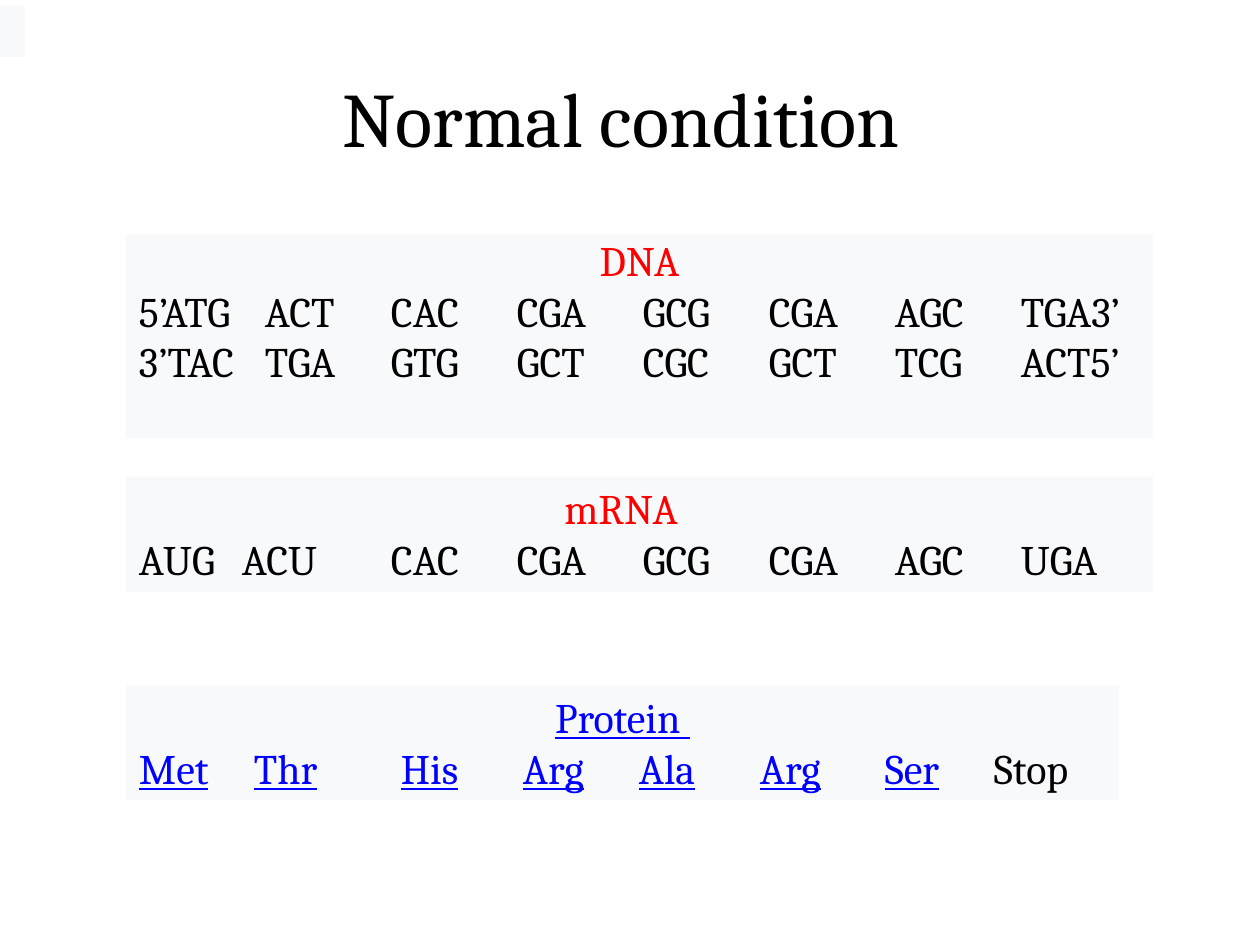
from lxml.etree import SubElement
from pptx import Presentation
from pptx.dml.color import RGBColor
from pptx.enum.shapes import MSO_SHAPE
from pptx.enum.text import MSO_ANCHOR, PP_ALIGN
from pptx.oxml.ns import qn
from pptx.util import Pt

PX = 914400 // 126
RED, BLUE, BLACK, PALE = "FF0000", "0000FF", "000000", "F8F9FA"


def tint(spot, code):
    spot.rgb = RGBColor.from_string(code)


def write(para, text, code, size=24, line=False):
    run = para.add_run()
    run.text = text
    style = {"name": "Cambria", "size": Pt(size), "underline": line}
    for key, value in style.items():
        setattr(run.font, key, value)
    tint(run.font.color, code)


deck = Presentation()
deck.slide_width, deck.slide_height = 1260 * PX, 945 * PX
slide = deck.slides.add_slide(deck.slide_layouts[6])

title = slide.shapes.add_textbox(63 * PX, 38 * PX, 1134 * PX, 157 * PX).text_frame
title.word_wrap = True
title.vertical_anchor = MSO_ANCHOR.MIDDLE
title.paragraphs[0].alignment = PP_ALIGN.CENTER
write(title.paragraphs[0], "Normal condition ", BLACK, 44)

inch = [126 * col for col in range(1, 8)]
panels = [
    ((126, 235, 1027, 203), 0, "DNA", RED, None, inch, [
        "5’ATG ACT CAC CGA GCG CGA AGC TGA3’",
        "3’TAC TGA GTG GCT CGC GCT TCG ACT5’"]),
    ((0, 6, 25, 51), 0, "", RED, None, [], []),
    ((126, 477, 1027, 115), 6, "mRNA", RED, 482, [103] + inch[1:], [
        "AUG ACU CAC CGA GCG CGA AGC UGA"]),
    ((126, 686, 993, 114), 6, "Protein ", BLUE, None,
     [115, 262, 384, 500, 621, 746, 855], [
        "Met Thr His Arg Ala Arg Ser Stop"]),
]

for place, inset, head, code, mid, stops, rows in panels:
    box = slide.shapes.add_shape(MSO_SHAPE.RECTANGLE, *[n * PX for n in place])
    box.shadow.inherit = False
    box.fill.solid()
    tint(box.fill.fore_color, PALE)
    box.line.fill.background()
    if not head:
        continue
    frame = box.text_frame
    form = {"word_wrap": True, "vertical_anchor": MSO_ANCHOR.TOP,
            "margin_left": 13 * PX, "margin_right": 13 * PX,
            "margin_top": inset * PX, "margin_bottom": inset * PX}
    for key, value in form.items():
        setattr(frame, key, value)
    link = code == BLUE
    para = frame.paragraphs[0]
    para.alignment = PP_ALIGN.LEFT if mid else PP_ALIGN.CENTER
    if mid:
        tabs = SubElement(para._p.get_or_add_pPr(), qn("a:tabLst"))
        SubElement(tabs, qn("a:tab"), pos=str(mid * PX), algn="ctr")
        write(para, "\t", BLACK)
    write(para, head, code, line=link)
    for row in rows:
        para = frame.add_paragraph()
        para.alignment = PP_ALIGN.LEFT
        tabs = SubElement(para._p.get_or_add_pPr(), qn("a:tabLst"))
        for stop in stops:
            SubElement(tabs, qn("a:tab"), pos=str(stop * PX), algn="l")
        if not link:
            write(para, row.replace(" ", "\t"), BLACK)
            continue
        for word in row.split()[:-1]:
            write(para, word, BLUE, line=True)
            write(para, "\t", BLACK)
        write(para, row.split()[-1], BLACK)

deck.save("out.pptx")
